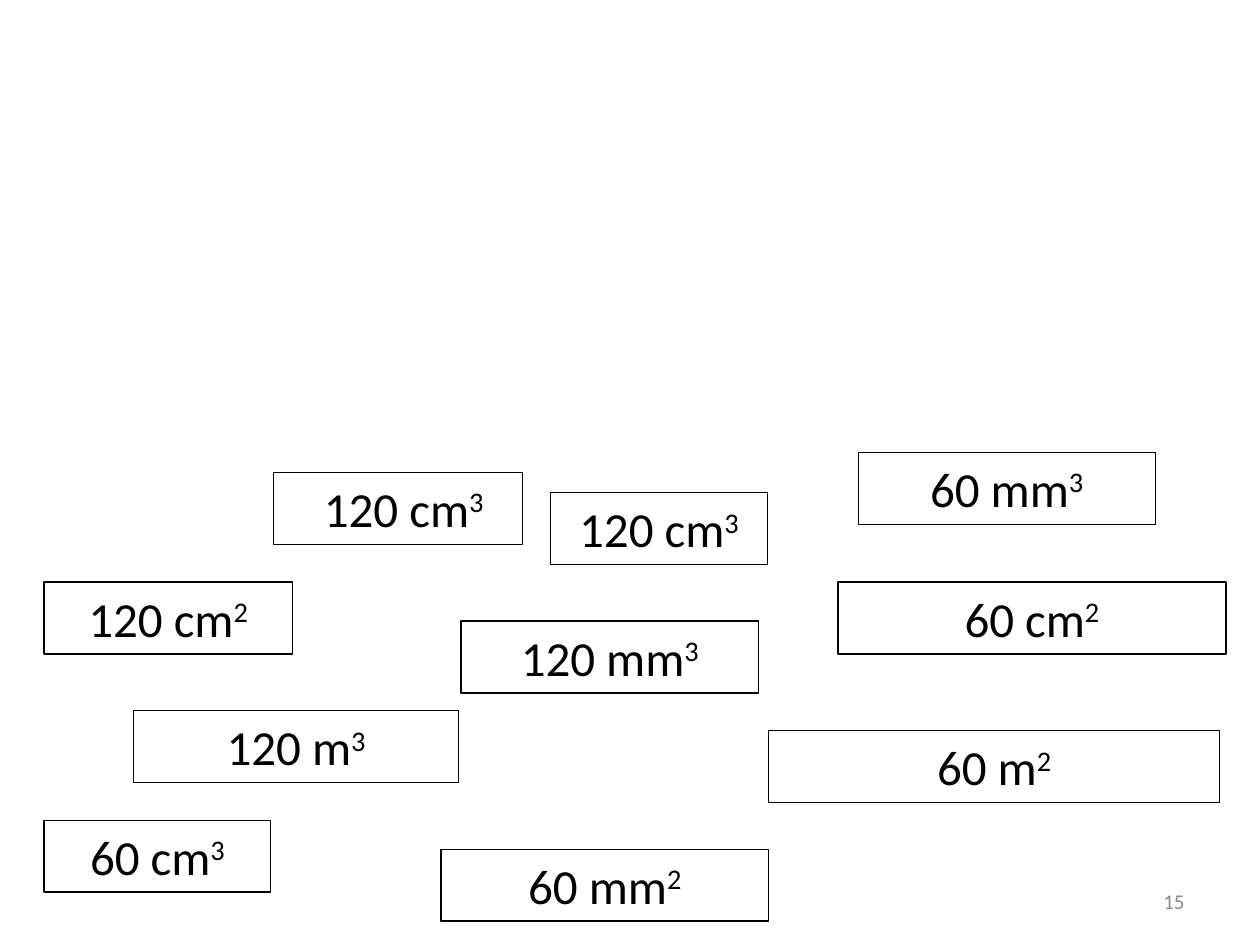
from dataclasses import dataclass

from pptx import Presentation
from pptx.dml.color import RGBColor
from pptx.enum.shapes import MSO_SHAPE
from pptx.enum.text import MSO_ANCHOR, MSO_AUTO_SIZE, PP_ALIGN
from pptx.util import Inches, Pt

RECT = MSO_SHAPE.RECTANGLE
CENTER, RIGHT = PP_ALIGN.CENTER, PP_ALIGN.RIGHT
TOP, MIDDLE = MSO_ANCHOR.TOP, MSO_ANCHOR.MIDDLE
GROW = MSO_AUTO_SIZE.SHAPE_TO_FIT_TEXT

WIDTH, HEIGHT = Inches(10), Inches(7.5)
COLS, ROWS = 100, 75
CARD_ROWS = 5.7


@dataclass(frozen=True)
class Theme:
    font: str = "Calibri"
    ink: RGBColor = RGBColor(0x00, 0x00, 0x00)
    paper: RGBColor = RGBColor(0xFF, 0xFF, 0xFF)
    muted: RGBColor = RGBColor(0x8C, 0x8C, 0x8C)
    card_size: int = 28
    number_size: int = 12
    border: float = 0.75
    thin_border: float = 0.5


THEME = Theme()

# column, row, columns wide, quantity, power
CARDS = [
    (3.5, 65.1, 18, "60 cm", "3"),
    (21.7, 37.5, 19.8, " 120 cm", "3"),
    (66.5, 46.2, 30.8, "60 cm", "2"),
    (3.5, 46.2, 19.7, "120 cm", "2"),
    (35, 67.4, 26, "60 mm", "2"),
    (36.6, 49.3, 23.6, "120 mm", "3"),
    (61, 58, 35.8, "60 m", "2"),
    (43.7, 39.1, 17.2, "120 cm", "3"),
    (10.6, 56.4, 25.8, "120 m", "3"),
]
FILLED_CARD = (68.1, 35.9, 23.6, "60 mm", "3")


def grid_box(col, row, cols, rows):
    """Turn grid columns and rows into left, top, width and height."""
    x, y = WIDTH / COLS, HEIGHT / ROWS
    return int(col * x), int(row * y), int(cols * x), int(rows * y)


def add_run(p, text, size, color):
    r = p.add_run()
    r.text = text
    r.font.name = THEME.font
    r.font.size = Pt(size)
    r.font.color.rgb = color
    return r


def add_card(slide, col, row, cols, quantity, power, filled=False):
    """Add a bordered answer card with its power as superscript."""
    sp = slide.shapes.add_shape(RECT, *grid_box(col, row, cols, CARD_ROWS))
    sp.shadow.inherit = False
    if filled:
        sp.fill.solid()
        sp.fill.fore_color.rgb = THEME.paper
    else:
        sp.fill.background()
    sp.line.color.rgb = THEME.ink
    sp.line.width = Pt(THEME.thin_border if filled else THEME.border)
    tf = sp.text_frame
    tf.word_wrap = True
    tf.auto_size = GROW
    tf.vertical_anchor = TOP
    p = tf.paragraphs[0]
    p.alignment = CENTER
    add_run(p, quantity, THEME.card_size, THEME.ink)
    r = add_run(p, power, THEME.card_size, THEME.ink)
    r.font._element.set("baseline", "30000")


def add_page_number(slide, number):
    sp = slide.shapes.add_textbox(*grid_box(71.7, 69.5, 23.3, 4))
    tf = sp.text_frame
    tf.word_wrap = True
    tf.vertical_anchor = MIDDLE
    p = tf.paragraphs[0]
    p.alignment = RIGHT
    add_run(p, number, THEME.number_size, THEME.muted)


def main():
    prs = Presentation()
    prs.slide_width, prs.slide_height = WIDTH, HEIGHT
    slide = prs.slides.add_slide(prs.slide_layouts[6])
    for card in CARDS:
        add_card(slide, *card)
    add_card(slide, *FILLED_CARD, filled=True)
    add_page_number(slide, "15")
    prs.save("out.pptx")


if __name__ == "__main__":
    main()
